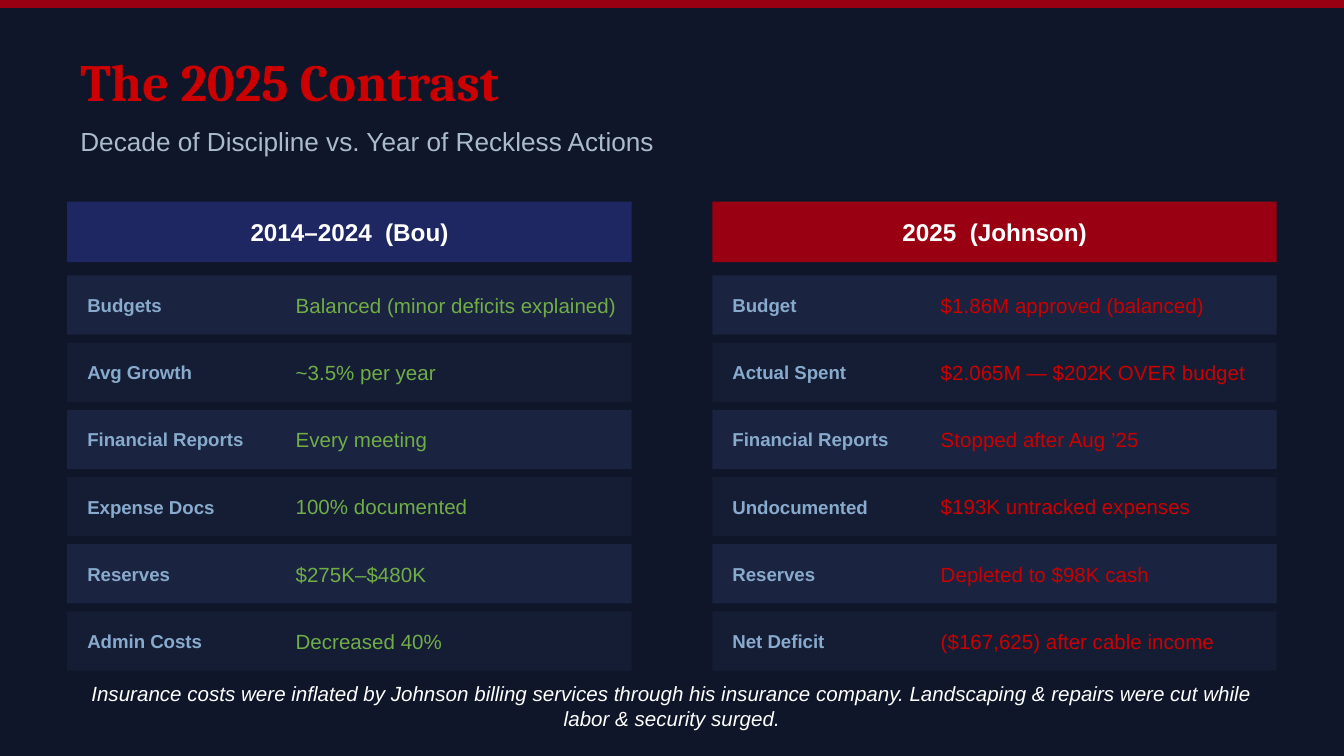
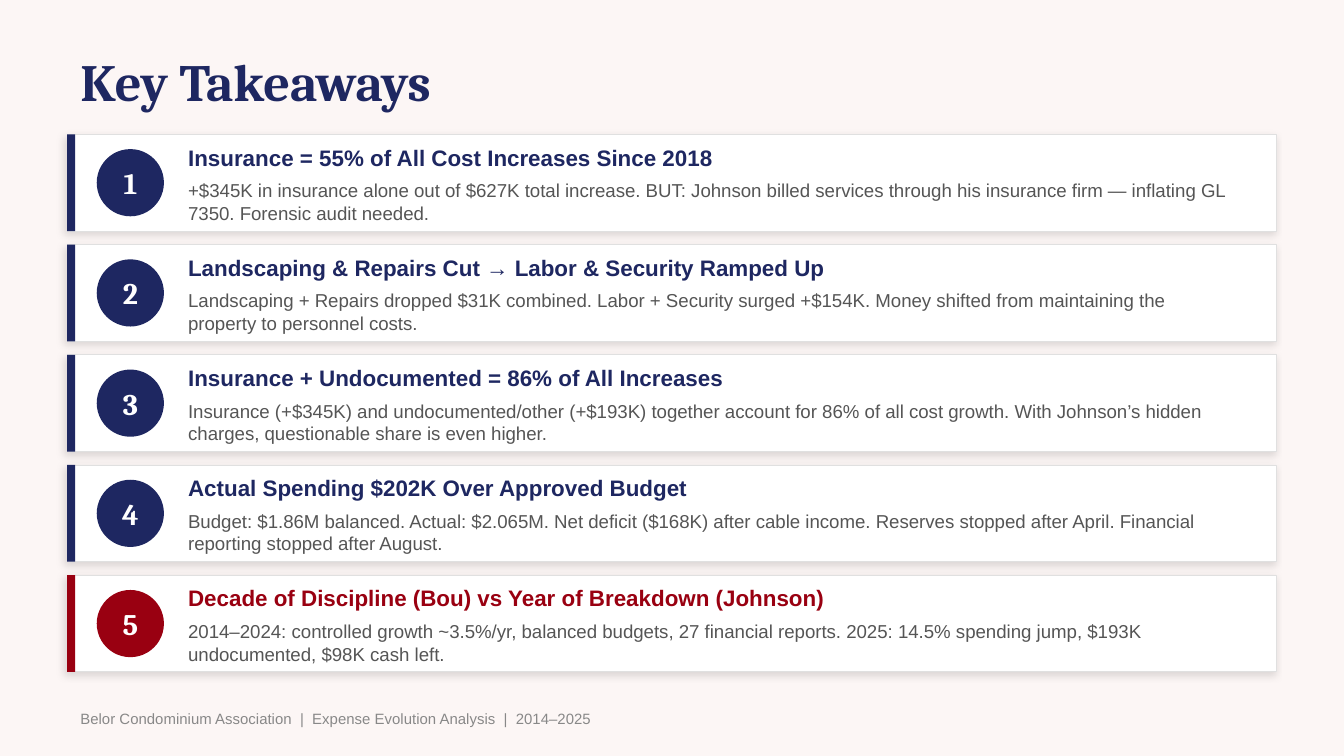
from dataclasses import dataclass

from lxml import etree
from pptx import Presentation
from pptx.dml.color import RGBColor as Rgb
from pptx.enum.shapes import MSO_SHAPE as Preset
from pptx.enum.text import MSO_ANCHOR as Anchor, PP_ALIGN as Align
from pptx.oxml import parse_xml
from pptx.oxml.ns import nsdecls, qn
from pptx.util import Inches, Pt


@dataclass(frozen=True)
class TextStyle:
    font: str
    size: float
    bold: bool = False
    italic: bool = False


class Theme:
    night, cream = "0F1629", "FCF6F5"
    navy, crimson, red, green = "1E2761", "990011", "CC0000", "70AD47"
    row_fills = ("1A2340", "151D35")
    white, card_border = "FFFFFF", "E0E0E0"
    subtitle_color, label_color = "AABBCC", "88AACC"
    body_color, footer_color = "555555", "888888"

    title = TextStyle("Cambria", 28, bold=True)
    number = TextStyle("Cambria", 16, bold=True)
    subtitle = TextStyle("Arial", 14)
    column_header = TextStyle("Arial", 13, bold=True)
    row_label = TextStyle("Arial", 10, bold=True)
    row_value = TextStyle("Arial", 11)
    closing_note = TextStyle("Arial", 11, italic=True)
    card_heading = TextStyle("Arial", 12, bold=True)
    card_body = TextStyle("Arial", 10)
    footer = TextStyle("Arial", 8)


def add_block(slide, preset, box, fill):
    """Add a filled shape without outline or shadow; box is in inches."""
    shape = slide.shapes.add_shape(preset, *map(Inches, box))
    shape.shadow.inherit = False
    shape.fill.solid()
    shape.fill.fore_color.rgb = Rgb.from_string(fill)
    shape.line.fill.background()
    return shape


def write(shape, text, style, color, align=Align.LEFT, inset=True):
    """Set vertically centred text; inset=False removes the margins."""
    frame = shape.text_frame
    frame.text = text
    frame.word_wrap = True
    frame.vertical_anchor = Anchor.MIDDLE
    if not inset:
        frame.margin_left = frame.margin_right = 0
        frame.margin_top = frame.margin_bottom = 0
    paragraph = frame.paragraphs[0]
    paragraph.alignment = align
    for run in paragraph.runs:
        run.font.name = style.font
        run.font.size = Pt(style.size)
        run.font.bold = style.bold
        run.font.italic = style.italic
        run.font.color.rgb = Rgb.from_string(color)


presentation = Presentation()
presentation.slide_width = Inches(10)
presentation.slide_height = presentation.slide_width * 9 // 16

# Backgrounds and titles
left, content_width = 0.5, 9
slides = []
for title, title_color, background in (
    ("The 2025 Contrast", Theme.red, Theme.night),
    ("Key Takeaways", Theme.navy, Theme.cream),
):
    slide = presentation.slides.add_slide(presentation.slide_layouts[6])
    slide.background.fill.solid()
    slide.background.fill.fore_color.rgb = Rgb.from_string(background)
    title_box = slide.shapes.add_textbox(
        Inches(left), Inches(0.3), Inches(content_width), Inches(0.6))
    write(title_box, title, Theme.title, title_color)
    slides.append(slide)
contrast, takeaways = slides

# The 2025 Contrast
add_block(contrast, Preset.RECTANGLE, (0, 0, 10, 0.06), Theme.crimson)
subtitle_box = contrast.shapes.add_textbox(
    Inches(left), Inches(0.85), Inches(content_width), Inches(0.4))
write(subtitle_box, "Decade of Discipline vs. Year of Reckless Actions",
      Theme.subtitle, Theme.subtitle_color)

columns = (
    (0.5, "2014–2024  (Bou)", Theme.navy, Theme.green, (
        ("Budgets", "Balanced (minor deficits explained)"),
        ("Avg Growth", "~3.5% per year"),
        ("Financial Reports", "Every meeting"),
        ("Expense Docs", "100% documented"),
        ("Reserves", "$275K–$480K"),
        ("Admin Costs", "Decreased 40%"),
    )),
    (5.3, "2025  (Johnson)", Theme.crimson, Theme.red, (
        ("Budget", "$1.86M approved (balanced)"),
        ("Actual Spent", "$2.065M — $202K OVER budget"),
        ("Financial Reports", "Stopped after Aug ’25"),
        ("Undocumented", "$193K untracked expenses"),
        ("Reserves", "Depleted to $98K cash"),
        ("Net Deficit", "($167,625) after cable income"),
    )),
)
column_width, row_height, row_pitch = 4.2, 0.44, 0.5
for column_left, header, header_fill, value_color, rows in columns:
    header_block = add_block(contrast, Preset.RECTANGLE,
                             (column_left, 1.5, column_width, 0.45), header_fill)
    write(header_block, header, Theme.column_header, Theme.white, Align.CENTER, inset=False)
    for index, (label, value) in enumerate(rows):
        top = 2.05 + index * row_pitch
        add_block(contrast, Preset.RECTANGLE, (column_left, top, column_width, row_height),
                  Theme.row_fills[index % 2])
        for offset, width, text, style, color in (
            (0.15, 1.5, label, Theme.row_label, Theme.label_color),
            (1.7, 2.4, value, Theme.row_value, value_color),
        ):
            cell_box = contrast.shapes.add_textbox(
                Inches(column_left + offset), Inches(top), Inches(width), Inches(row_height))
            write(cell_box, text, style, color, inset=False)

note_box = contrast.shapes.add_textbox(
    Inches(left), Inches(5), Inches(content_width), Inches(0.5))
write(note_box,
      "Insurance costs were inflated by Johnson billing services through his insurance "
      "company. Landscaping & repairs were cut while labor & security surged.",
      Theme.closing_note, Theme.white, Align.CENTER)

# Key Takeaways
cards = (
    ("Insurance = 55% of All Cost Increases Since 2018",
     "+$345K in insurance alone out of $627K total increase. BUT: Johnson billed services "
     "through his insurance firm — inflating GL 7350. Forensic audit needed.", Theme.navy),
    ("Landscaping & Repairs Cut → Labor & Security Ramped Up",
     "Landscaping + Repairs dropped $31K combined. Labor + Security surged +$154K. "
     "Money shifted from maintaining the property to personnel costs.", Theme.navy),
    ("Insurance + Undocumented = 86% of All Increases",
     "Insurance (+$345K) and undocumented/other (+$193K) together account for 86% of all "
     "cost growth. With Johnson’s hidden charges, questionable share is even higher.",
     Theme.navy),
    ("Actual Spending $202K Over Approved Budget",
     "Budget: $1.86M balanced. Actual: $2.065M. Net deficit ($168K) after cable income. "
     "Reserves stopped after April. Financial reporting stopped after August.", Theme.navy),
    ("Decade of Discipline (Bou) vs Year of Breakdown (Johnson)",
     "2014–2024: controlled growth ~3.5%/yr, balanced budgets, 27 financial reports. "
     "2025: 14.5% spending jump, $193K undocumented, $98K cash left.", Theme.crimson),
)
card_height, card_pitch = 0.72, 0.82
card_shadow = parse_xml(
    f'<a:outerShdw {nsdecls("a")} blurRad="{Pt(4)}" dist="{Pt(2)}" dir="{135 * 60000}" '
    'algn="bl" rotWithShape="0"><a:srgbClr val="000000"><a:alpha val="12000"/>'
    '</a:srgbClr></a:outerShdw>')
for index, (heading, body, accent) in enumerate(cards):
    top = 1 + index * card_pitch
    card = add_block(takeaways, Preset.RECTANGLE,
                     (left, top, content_width, card_height), Theme.white)
    card.line.color.rgb = Rgb.from_string(Theme.card_border)
    card.line.width = Pt(0.5)
    effects = card.element.spPr.find(qn("a:effectLst"))
    effects.append(parse_xml(etree.tostring(card_shadow)))

    add_block(takeaways, Preset.RECTANGLE, (left, top, 0.06, card_height), accent)
    badge = add_block(takeaways, Preset.OVAL, (0.72, top + 0.11, 0.5, 0.5), accent)
    write(badge, str(index + 1), Theme.number, Theme.white, Align.CENTER, inset=False)
    for offset, text, style, color in (
        (0.02, heading, Theme.card_heading, accent),
        (0.35, body, Theme.card_body, Theme.body_color),
    ):
        card_box = takeaways.shapes.add_textbox(
            Inches(1.4), Inches(top + offset), Inches(7.8), Inches(0.3))
        write(card_box, text, style, color, inset=False)

footer_box = takeaways.shapes.add_textbox(
    Inches(left), Inches(5.15), Inches(content_width), Inches(0.4))
write(footer_box,
      "Belor Condominium Association  |  Expense Evolution Analysis  |  2014–2025",
      Theme.footer, Theme.footer_color)

presentation.save("out.pptx")
